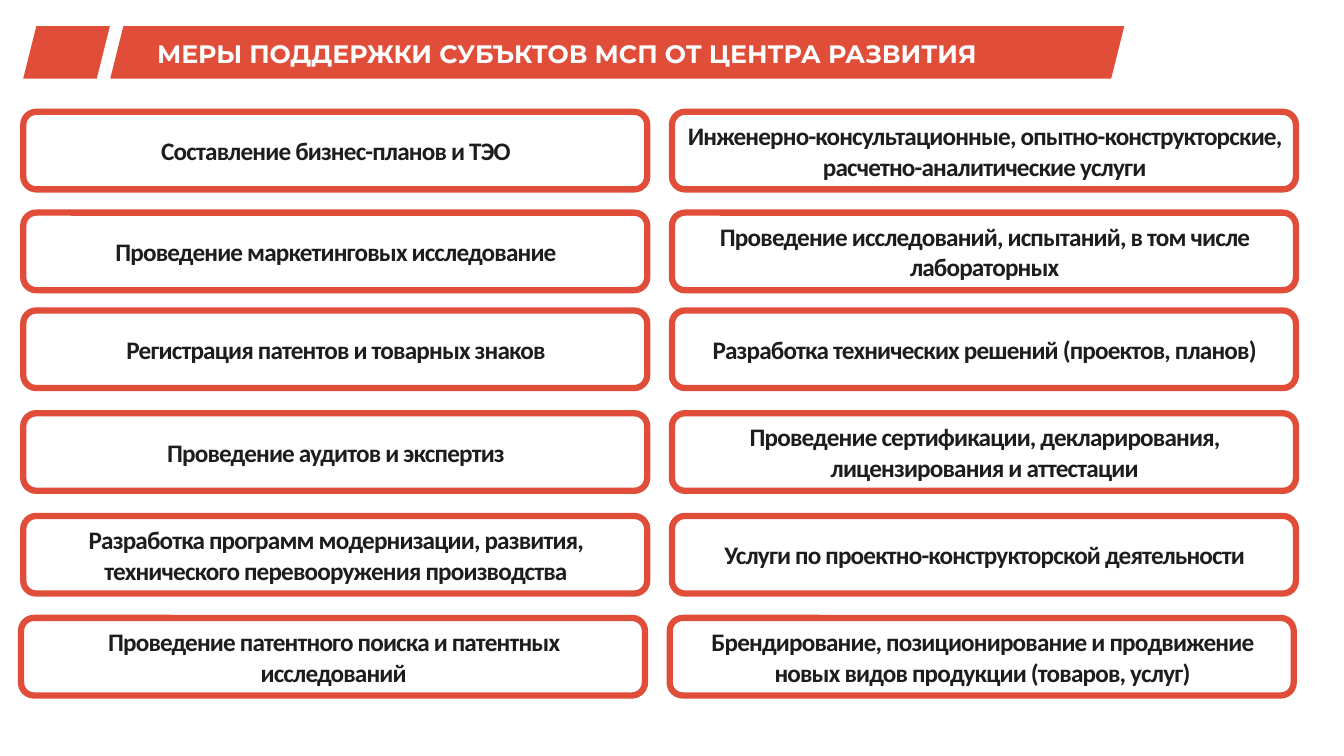
import pptx
import pptx.util
from pptx.dml.color import RGBColor
from pptx.enum.shapes import MSO_SHAPE
from pptx.enum.text import MSO_ANCHOR, PP_ALIGN

Pt = pptx.util.Pt

RED, DARK, WHITE = "E04D39", "1D1D1B", "FFFFFF"
TITLE = "МЕРЫ ПОДДЕРЖКИ СУБЪКТОВ МСП ОТ ЦЕНТРА РАЗВИТИЯ"
CARD_WIDTH, CARD_HEIGHT = 445.7, 55.4
COLUMN_LEFTS = (16.6, 480)
LAST_ROW_SHIFT = -1.6
ROWS = [
    (79.9, "Составление бизнес-планов и ТЭО",
     "Инженерно-консультационные, опытно-конструкторские, расчетно-аналитические услуги"),
    (151.9, "Проведение маркетинговых исследование",
     "Проведение исследований, испытаний, в том числе лабораторных"),
    (221.8, "Регистрация патентов и товарных знаков",
     "Разработка технических решений (проектов, планов)"),
    (295.2, "Проведение аудитов и экспертиз",
     "Проведение сертификации, декларирования, лицензирования и аттестации"),
    (368.6, "Разработка программ модернизации, развития, технического перевооружения производства",
     "Услуги по проектно-конструкторской деятельности"),
    (441.4, "Проведение патентного поиска и патентных исследований",
     "Брендирование, позиционирование и продвижение новых видов продукции (товаров, услуг)"),
]


def color(value):
    return RGBColor.from_string(value)


def set_font(p, name, value):
    p.font.name = name
    p.font.size = Pt(18)
    p.font.bold = True
    p.font.color.rgb = color(value)


def add_banner_part(s, left, width):
    sp = s.shapes.add_shape(MSO_SHAPE.PARALLELOGRAM, Pt(left), Pt(18.7), Pt(width), Pt(37.4))
    sp.shadow.inherit = False
    sp.adjustments[0] = 0.25
    sp.fill.solid()
    sp.fill.fore_color.rgb = color(RED)
    sp.line.fill.background()


def add_title(s, text):
    sp = s.shapes.add_textbox(Pt(105.1), Pt(23.8), Pt(653.8), Pt(29))
    tf = sp.text_frame
    tf.word_wrap = False
    p = tf.paragraphs[0]
    p.text = text
    set_font(p, "Montserrat", WHITE)


def add_card(s, left, top, text):
    sp = s.shapes.add_shape(MSO_SHAPE.ROUNDED_RECTANGLE, Pt(left), Pt(top),
                            Pt(CARD_WIDTH), Pt(CARD_HEIGHT))
    sp.shadow.inherit = False
    sp.fill.background()
    sp.line.color.rgb = color(RED)
    sp.line.width = Pt(4.5)
    tf = sp.text_frame
    tf.word_wrap = True
    tf.vertical_anchor = MSO_ANCHOR.MIDDLE
    p = tf.paragraphs[0]
    p.alignment = PP_ALIGN.CENTER
    p.line_spacing = 1.01
    p.space_before = Pt(0.8)
    r = p.add_run()
    r.text = text
    set_font(p, "Calibri", DARK)
    # Left margin of 1 pt and letter spacing of -0.6 pt
    p._p.get_or_add_pPr().set("marL", str(Pt(1)))
    r._r.get_or_add_rPr().set("spc", "-60")


def main():
    prs = pptx.Presentation()
    prs.slide_width, prs.slide_height = Pt(960), Pt(540)
    s = prs.slides.add_slide(prs.slide_layouts[6])
    add_banner_part(s, 78.8, 724.3)
    add_title(s, TITLE)
    add_banner_part(s, 16.6, 61.9)
    for row in ROWS:
        top, *texts = row
        shift = LAST_ROW_SHIFT if row is ROWS[-1] else 0
        for left, text in zip(COLUMN_LEFTS, texts):
            add_card(s, left + shift, top, text)
    prs.save("out.pptx")


if __name__ == "__main__":
    main()
